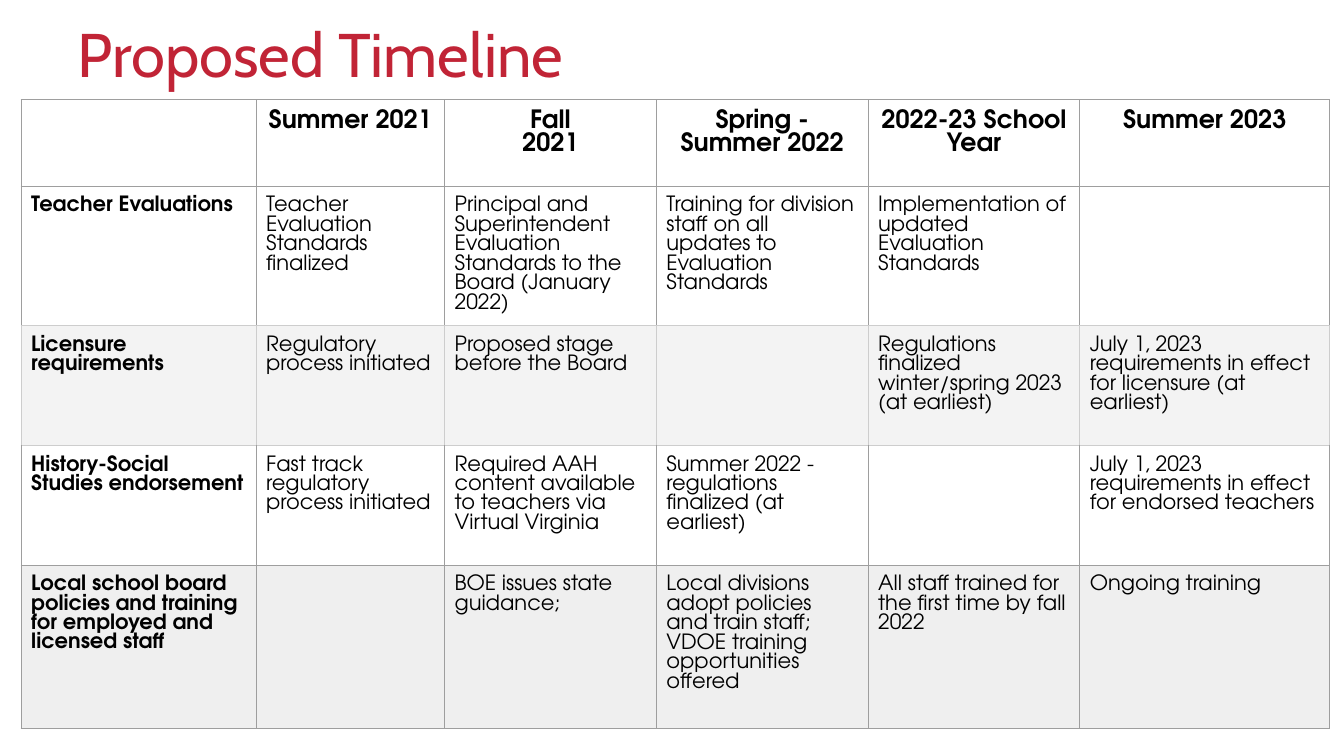
from lxml.etree import SubElement
from pptx import Presentation
from pptx.dml.color import RGBColor
from pptx.enum.text import MSO_ANCHOR, PP_ALIGN
from pptx.oxml.ns import qn
from pptx.util import Inches, Pt

RED = RGBColor(0xC1, 0x24, 0x36)
BLACK = RGBColor(0, 0, 0)
WHITE = RGBColor(0xFF, 0xFF, 0xFF)
PALE_GREY = RGBColor(0xF3, 0xF3, 0xF3)
LIGHT_GREY = RGBColor(0xEF, 0xEF, 0xEF)
RULE = RGBColor(0x9E, 0x9E, 0x9E)
SOFT_RULE = RGBColor(0xCD, 0xCD, 0xCD)

TABLE_FONT = "TeX Gyre Adventor"
COLUMN_WIDTHS = [2.33, 1.87, 2.1, 2.1, 2.1, 2.48]
ROW_HEIGHTS = [0.86, 1.38, 1.19, 1.19, 1.62]

TIMELINE = [
    ["", "Summer 2021", "Fall\n2021", "Spring - Summer 2022",
     "2022-23 School Year", "Summer 2023"],
    ["Teacher Evaluations",
     "Teacher Evaluation Standards finalized",
     "Principal and Superintendent Evaluation Standards to the Board (January 2022)",
     "Training for division staff on all updates to Evaluation Standards",
     "Implementation of updated Evaluation Standards",
     ""],
    ["Licensure requirements",
     "Regulatory process initiated",
     "Proposed stage before the Board",
     "",
     "Regulations finalized winter/spring 2023 (at earliest)",
     "July 1, 2023 requirements in effect for licensure (at earliest)"],
    ["History-Social Studies endorsement",
     "Fast track regulatory process initiated",
     "Required AAH content available to teachers via Virtual Virginia",
     "Summer 2022 - regulations finalized (at earliest)",
     "",
     "July 1, 2023 requirements in effect for endorsed teachers"],
    ["Local school board policies and training for employed and licensed staff",
     "",
     "BOE issues state guidance;",
     "Local divisions adopt policies and train staff; VDOE training opportunities offered",
     "All staff trained for the first time by fall 2022",
     "Ongoing training"],
]

# Per row: fill, then the colours of the side, top and bottom rules
ROW_STYLES = [
    (WHITE, RULE, RULE, RULE),
    (WHITE, RULE, RULE, SOFT_RULE),
    (PALE_GREY, SOFT_RULE, SOFT_RULE, SOFT_RULE),
    (WHITE, RULE, SOFT_RULE, RULE),
    (LIGHT_GREY, RULE, RULE, RULE),
]


def apply_format(target, values):
    for attribute, value in values.items():
        setattr(target, attribute, value)


def set_borders(cell, side, top, bottom):
    properties = cell._tc.get_or_add_tcPr()
    edges = {"a:lnL": side, "a:lnR": side, "a:lnT": top, "a:lnB": bottom}
    for tag, color in edges.items():
        line = SubElement(properties, qn(tag), w=str(Pt(0.75)))
        fill = SubElement(line, qn("a:solidFill"))
        SubElement(fill, qn("a:srgbClr"), val=str(color))


def fill_cell(cell, text, style, is_header, is_label):
    fill, side, top, bottom = style
    set_borders(cell, side, top, bottom)
    cell.fill.solid()
    cell.fill.fore_color.rgb = fill
    margin = Inches(0.1)
    apply_format(cell, {"margin_left": margin, "margin_right": margin,
                        "margin_top": margin, "margin_bottom": margin,
                        "text": text})
    for paragraph in cell.text_frame.paragraphs:
        paragraph.alignment = PP_ALIGN.CENTER if is_header else PP_ALIGN.LEFT
        apply_format(paragraph.font, {"name": TABLE_FONT,
                                      "size": Pt(18 if is_header else 15),
                                      "bold": is_header or is_label})
        paragraph.font.color.rgb = BLACK


def add_title(slide, text):
    title = slide.shapes.title
    apply_format(title, {"left": Inches(0.67), "top": Inches(0),
                         "width": Inches(12), "height": Inches(1.14)})
    frame = title.text_frame
    apply_format(frame, {"text": text, "word_wrap": True,
                         "vertical_anchor": MSO_ANCHOR.MIDDLE})
    heading = frame.paragraphs[0]
    apply_format(heading, {"alignment": PP_ALIGN.LEFT, "line_spacing": 0.9})
    apply_format(heading.font, {"name": "Cabin", "size": Pt(44)})
    heading.font.color.rgb = RED


def add_timeline(slide):
    table = slide.shapes.add_table(
        len(ROW_HEIGHTS), len(COLUMN_WIDTHS), Inches(0.21), Inches(0.99),
        Inches(sum(COLUMN_WIDTHS)), Inches(sum(ROW_HEIGHTS))).table
    apply_format(table, {"first_row": False, "horz_banding": False})
    for column, width in zip(table.columns, COLUMN_WIDTHS):
        column.width = Inches(width)
    for r, (row, height) in enumerate(zip(table.rows, ROW_HEIGHTS)):
        row.height = Inches(height)
        for c, cell in enumerate(row.cells):
            fill_cell(cell, TIMELINE[r][c], ROW_STYLES[r], r == 0, c == 0)


def main():
    deck = Presentation()
    apply_format(deck, {"slide_width": Inches(13.33), "slide_height": Inches(7.5)})
    slide = deck.slides.add_slide(deck.slide_layouts[5])
    add_title(slide, "Proposed Timeline")
    add_timeline(slide)
    deck.save("out.pptx")


if __name__ == "__main__":
    main()
